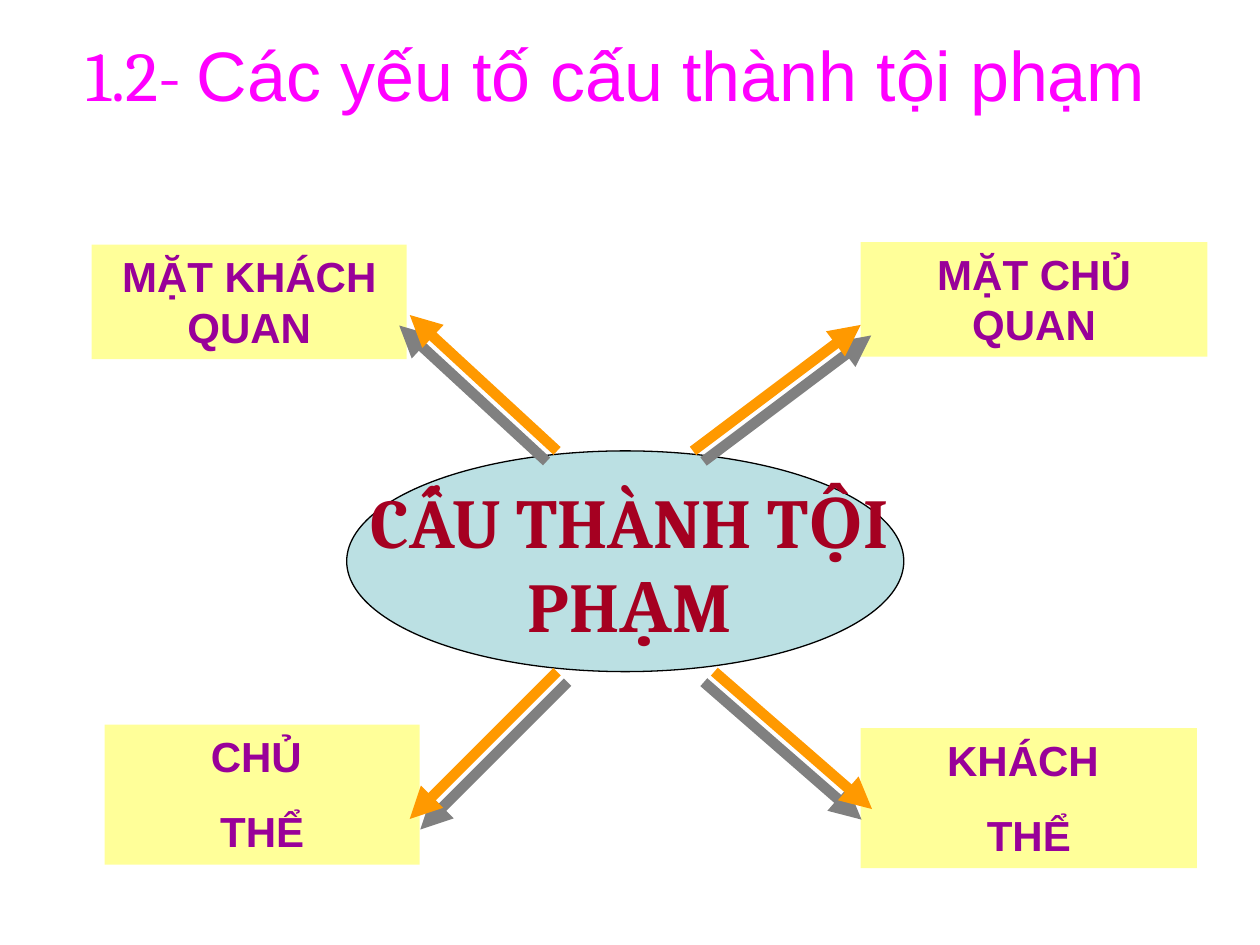
from lxml import etree
from pptx import Presentation
from pptx.dml.color import RGBColor
from pptx.enum.shapes import MSO_CONNECTOR, MSO_SHAPE
from pptx.enum.text import MSO_ANCHOR, MSO_AUTO_SIZE, PP_ALIGN
from pptx.oxml.ns import qn
from pptx.util import Cm, Pt

OVAL, RECT = MSO_SHAPE.OVAL, MSO_SHAPE.RECTANGLE
LINE = MSO_CONNECTOR.STRAIGHT
CENTER, JUSTIFY = PP_ALIGN.CENTER, PP_ALIGN.JUSTIFY
FRAME = {"word_wrap": True, "auto_size": MSO_AUTO_SIZE.NONE,
         "vertical_anchor": MSO_ANCHOR.TOP}

TITLE_ONLY = 5
LEFT_DOWN, RIGHT_DOWN = 135, 45


def color(code):
    return RGBColor.from_string(code)


def apply(item, values):
    for name, value in values.items():
        setattr(item, name, value)


def add_node(parent, tag, **attrs):
    return etree.SubElement(parent, qn(tag), attrs)


class Board:
    title_font = {"size": Pt(40), "bold": False}
    label_font = {"name": "Cambria", "size": Pt(40), "bold": True}
    box_font = {"name": "Arial", "size": Pt(24), "bold": True}
    pink, red, purple = "FF00FF", "A50021", "990099"
    yellow, blue, orange = "FFFF99", "BBE0E3", "FF9900"
    black, gray = "000000", "808080"

    def __init__(self, deck):
        self.slide = deck.slides.add_slide(deck.slide_layouts[TITLE_ONLY])
        self.shapes = self.slide.shapes

    def text(self, frame, lines, font, ink, align=CENTER, gap=0):
        """Fill a frame; each line is a list of (text, extra font values)."""
        apply(frame, FRAME)
        for i, runs in enumerate(lines):
            para = frame.add_paragraph() if i else frame.paragraphs[0]
            apply(para, {"alignment": align, "space_before": Pt(gap if i else 0)})
            for words, extra in runs:
                run = para.add_run()
                run.text = words
                apply(run.font, {**font, **extra})
                run.font.color.rgb = color(ink)

    def title(self, area, runs):
        shape = self.shapes.title
        apply(shape, dict(zip(("left", "top", "width", "height"), map(Cm, area))))
        self.text(shape.text_frame, [runs], self.title_font, self.pink, JUSTIFY)

    def shape(self, kind, area, fill):
        shape = self.shapes.add_shape(kind, *map(Cm, area))
        shape.shadow.inherit = False
        shape.fill.solid()
        shape.fill.fore_color.rgb = color(fill)
        shape.line.fill.background()
        return shape

    def oval(self, area):
        shape = self.shape(OVAL, area, self.blue)
        shape.line.color.rgb = color(self.black)
        shape.line.width = Pt(0.75)

    def label(self, area, words):
        box = self.shapes.add_textbox(*map(Cm, area))
        self.text(box.text_frame, [[(words, {})]], self.label_font, self.red)

    def box(self, area, *lines):
        shape = self.shape(RECT, area, self.yellow)
        self.text(shape.text_frame, [[(words, {})] for words in lines],
                  self.box_font, self.purple, gap=14)

    def arrow(self, start, end, angle):
        """Draw an arrow whose hard shadow falls at the given angle."""
        link = self.shapes.add_connector(LINE, *map(Cm, start + end))
        link.line.color.rgb = color(self.orange)
        link.line.width = Pt(6)
        props = link.element.spPr
        add_node(props.find(qn("a:ln")), "a:tailEnd", type="triangle")
        effects = add_node(props, "a:effectLst")
        shade = add_node(effects, "a:outerShdw", dist=str(Pt(8.5)),
                         dir=str(angle * 60000), algn="ctr", rotWithShape="0")
        add_node(shade, "a:srgbClr", val=self.gray)


def main():
    deck = Presentation()
    apply(deck, {"slide_width": Cm(25.4), "slide_height": Cm(19.05)})
    board = Board(deck)

    board.title((1.47, 0.51, 23.29, 1.96),
                [("1.2- ", {"name": "Cambria"}),
                 ("Các yếu tố cấu thành tội phạm", {"name": "Arial"})])
    board.oval((6.99, 9.09, 11.23, 4.45))
    board.label((7.19, 9.53, 11, 4.01), "CẤU THÀNH TỘI PHẠM")

    board.box((1.85, 4.93, 6.35, 2.31), "MẶT KHÁCH QUAN")
    board.box((17.35, 4.88, 6.99, 2.31), "MẶT CHỦ QUAN")
    board.box((2.11, 14.61, 6.35, 2.82), "CHỦ ", "THỂ")
    board.box((17.35, 14.68, 6.78, 2.82), "KHÁCH ", "THỂ")

    board.arrow((11.23, 9.09), (8.26, 6.35), LEFT_DOWN)
    board.arrow((13.97, 9.09), (17.35, 6.55), RIGHT_DOWN)
    board.arrow((11.23, 13.54), (8.26, 16.51), RIGHT_DOWN)
    board.arrow((14.4, 13.54), (17.58, 16.31), LEFT_DOWN)

    deck.save("out.pptx")


if __name__ == "__main__":
    main()
